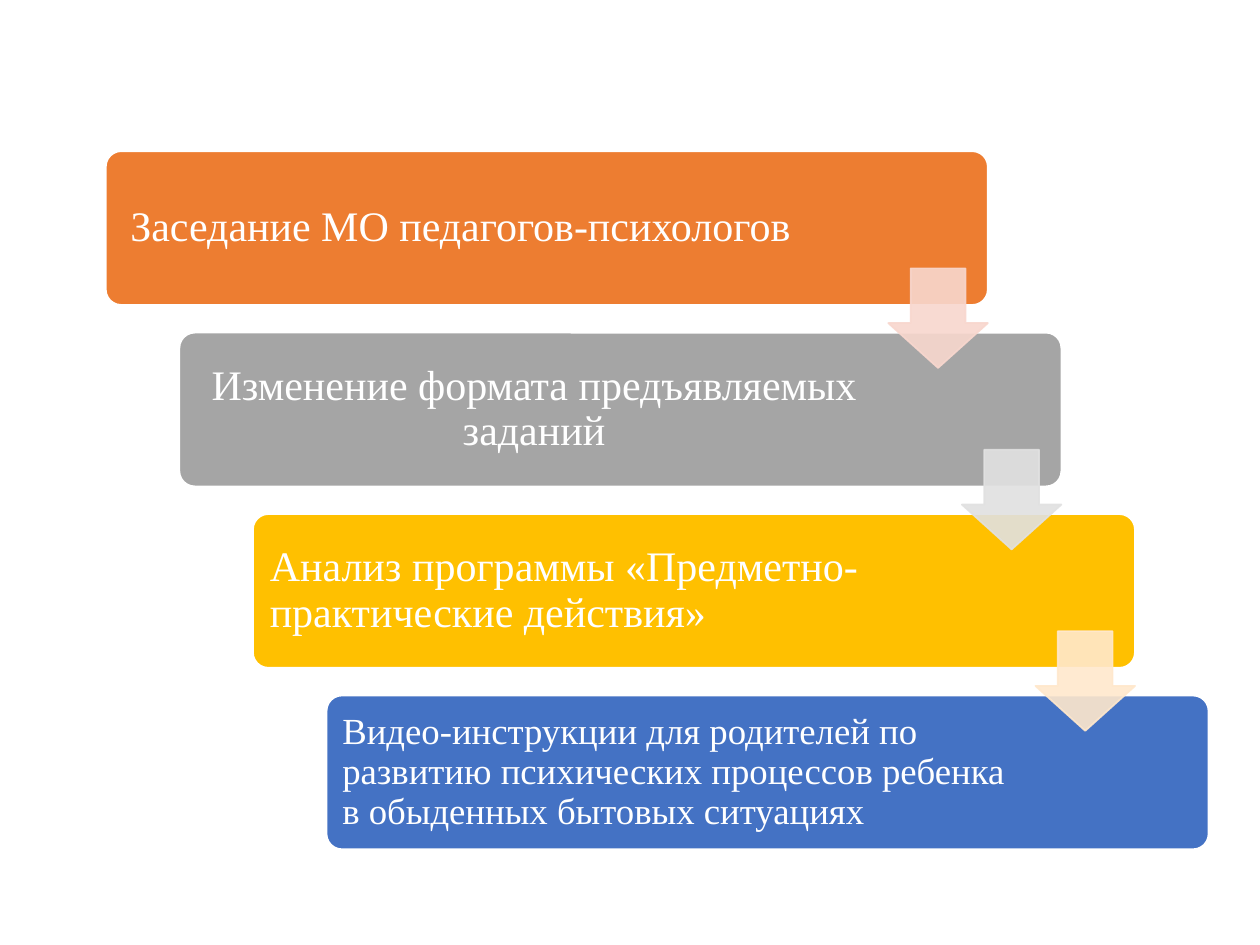
from dataclasses import dataclass
from typing import Optional

from lxml.etree import SubElement
from pptx import Presentation
from pptx.dml.color import RGBColor
from pptx.enum.shapes import MSO_SHAPE as Preset
from pptx.enum.text import MSO_ANCHOR as Anchor, PP_ALIGN as Align
from pptx.oxml.ns import qn
from pptx.util import Inches, Pt


@dataclass(frozen=True)
class Theme:
    font: str = "Times New Roman"
    text: str = "FFFFFF"
    outline: str = "FFFFFF"
    large: int = 24
    small: int = 21
    arrow_opacity: int = 90


@dataclass(frozen=True)
class Step:
    text: str
    fill: str
    align: Align
    size: int
    inset: float = 0.1
    arrow: Optional[str] = None


THEME = Theme()

STEPS = [
    Step("Заседание МО педагогов-психологов", "ED7D31", Align.CENTER,
         THEME.large, arrow="F8D7CE"),
    Step("Изменение формата предъявляемых заданий", "A5A5A5", Align.CENTER,
         THEME.large, arrow="E1E1E1"),
    Step("Анализ программы «Предметно-практические действия»", "FFC000",
         Align.LEFT, THEME.large, arrow="FFE8CC"),
    Step("Видео-инструкции для родителей по развитию психических процессов "
         "ребенка в обыденных бытовых ситуациях", "4472C4", Align.LEFT,
         THEME.small, inset=0.09),
]

# Staircase geometry, in inches
LEFT, TOP = 0.84, 1.2
STEP_X, STEP_Y = 0.584, 1.44
BAR_WIDTH, BAR_HEIGHT = 7, 1.22
TEXT_WIDTH, TEXT_MARGIN = 5.56, 0.035
ARROW_X, ARROW_Y, ARROW_SIZE = 6.21, 0.93, 0.79


def set_opacity(color_format, percent: int) -> None:
    """Add an alpha value to a solid colour."""
    for color in color_format.iter(qn("a:srgbClr")):
        SubElement(color, qn("a:alpha"), val=str(percent * 1000))


def add_preset(slide, preset: Preset, left: float, top: float, width: float,
               height: float, adjustments: list[float], fill: str, line: str):
    shape = slide.shapes.add_shape(preset, Inches(left), Inches(top),
                                   Inches(width), Inches(height))
    for index, value in enumerate(adjustments):
        shape.adjustments[index] = value
    shape.shadow.inherit = False
    shape.fill.solid()
    shape.fill.fore_color.rgb = RGBColor.from_string(fill)
    shape.line.color.rgb = RGBColor.from_string(line)
    shape.line.width = Pt(1)
    return shape


def add_label(slide, step: Step, left: float, top: float) -> None:
    box = slide.shapes.add_textbox(
        Inches(left + TEXT_MARGIN), Inches(top + TEXT_MARGIN),
        Inches(TEXT_WIDTH), Inches(BAR_HEIGHT - 2 * TEXT_MARGIN))
    frame = box.text_frame
    frame.word_wrap = True
    frame.vertical_anchor = Anchor.MIDDLE
    frame.margin_left = frame.margin_right = Inches(step.inset)
    frame.margin_top = frame.margin_bottom = Inches(step.inset)
    paragraph = frame.paragraphs[0]
    paragraph.text = step.text
    paragraph.alignment = step.align
    paragraph.line_spacing = 0.9
    paragraph.font.name = THEME.font
    paragraph.font.size = Pt(step.size)
    paragraph.font.color.rgb = RGBColor.from_string(THEME.text)


def add_arrow(slide, color: str, left: float, top: float) -> None:
    arrow = add_preset(slide, Preset.DOWN_ARROW, left + ARROW_X, top + ARROW_Y,
                       ARROW_SIZE, ARROW_SIZE, [0.55, 0.45], color, color)
    set_opacity(arrow.element.spPr, THEME.arrow_opacity)


def main() -> None:
    presentation = Presentation()
    presentation.slide_width = Inches(10)
    presentation.slide_height = Inches(7.5)
    slide = presentation.slides.add_slide(presentation.slide_layouts[6])
    corners = [(LEFT + index * STEP_X, TOP + index * STEP_Y)
               for index in range(len(STEPS))]

    # Bars with their labels
    for step, (left, top) in zip(STEPS, corners):
        add_preset(slide, Preset.ROUNDED_RECTANGLE, left, top, BAR_WIDTH,
                   BAR_HEIGHT, [0.1], step.fill, THEME.outline)
        add_label(slide, step, left, top)

    # Arrows lie over the bars they join
    for step, (left, top) in zip(STEPS, corners):
        if step.arrow:
            add_arrow(slide, step.arrow, left, top)

    presentation.save("out.pptx")


if __name__ == "__main__":
    main()
